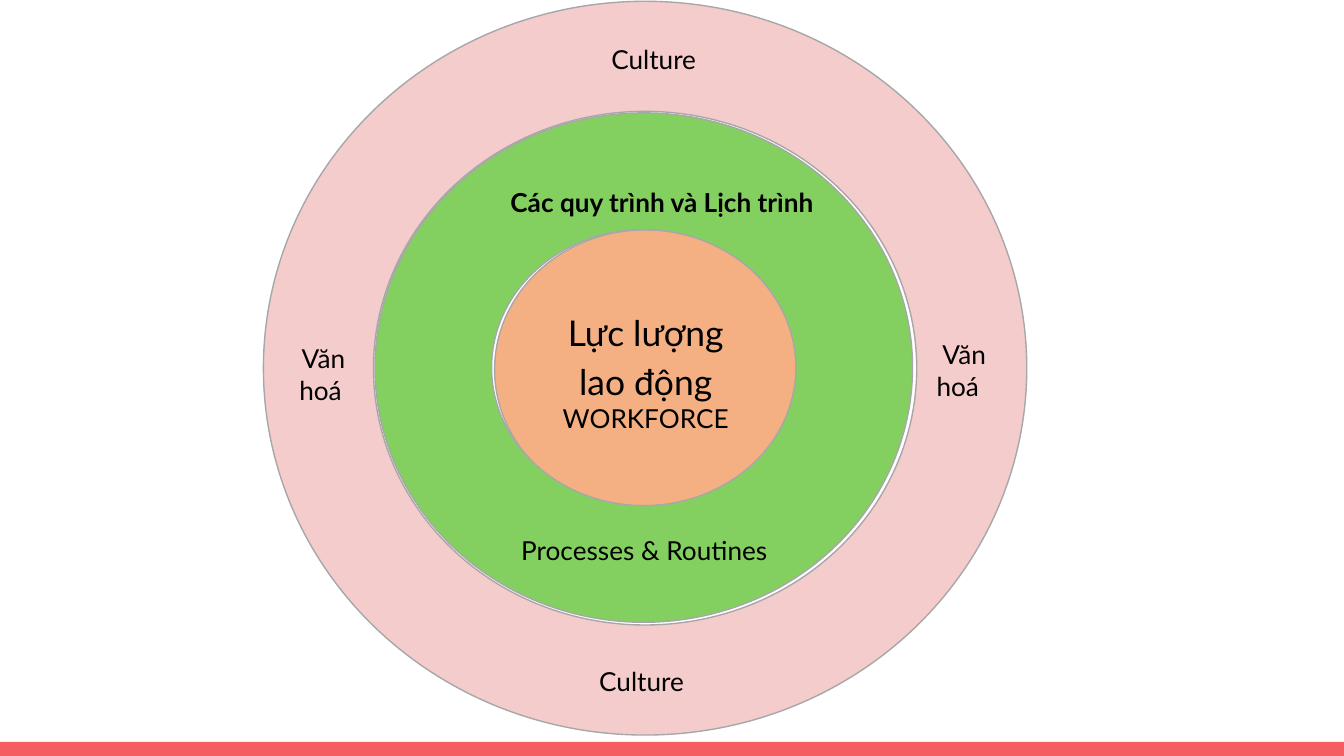
import pptx
import pptx.dml.color
import pptx.enum.shapes
import pptx.enum.text
import pptx.util

Inches = pptx.util.Inches
Pt = pptx.util.Pt
Kind = pptx.enum.shapes.MSO_SHAPE
Align = pptx.enum.text.PP_ALIGN
Anchor = pptx.enum.text.MSO_ANCHOR

WIDTH = 10
HEIGHT = WIDTH * 9 / 16


def color(code):
    return pptx.dml.color.RGBColor.from_string(code)


def add_shape(slide, kind, box, fill, line=None):
    shape = slide.shapes.add_shape(kind, *map(Inches, box))
    shape.shadow.inherit = False
    shape.fill.solid()
    shape.fill.fore_color.rgb = color(fill)
    if line:
        shape.line.color.rgb = color(line)
        shape.line.width = Pt(0.75)
    else:
        shape.line.fill.background()
    return shape


def set_frame(frame, anchor):
    frame.word_wrap = True
    frame.vertical_anchor = anchor
    frame.margin_left = frame.margin_right = Inches(0.1)
    frame.margin_top = frame.margin_bottom = Inches(0.1)


def set_para(para, text, size=14, bold=False, align=Align.LEFT):
    para.text = text
    para.alignment = align
    for run in para.runs:
        run.font.name = "Lato"
        run.font.size = Pt(size)
        run.font.bold = bold
        run.font.color.rgb = color("000000")


def add_ring(slide, box, hole, fill, labels):
    """Draw a donut; label boxes are offset from its top left corner."""
    left, top = box[:2]
    ring = add_shape(slide, Kind.DONUT, box, fill, "A7A7A7")
    ring.adjustments[0] = hole
    for text, (x, y, width, height), style in labels:
        area = (left + x, top + y, width, height)
        label = slide.shapes.add_textbox(*map(Inches, area))
        set_frame(label.text_frame, Anchor.TOP)
        set_para(label.text_frame.paragraphs[0], text, **style)


def add_core(slide, box):
    core = add_shape(slide, Kind.OVAL, box, "F4B083", "A7A7A7")
    frame = core.text_frame
    set_frame(frame, Anchor.MIDDLE)
    title = frame.paragraphs[0]
    set_para(title, "Lực lượng lao động", size=19, align=Align.CENTER)
    title.line_spacing = 1.15
    set_para(frame.add_paragraph(), "WORKFORCE", align=Align.CENTER)


def main():
    deck = pptx.Presentation()
    deck.slide_width = Inches(WIDTH)
    deck.slide_height = Inches(HEIGHT)
    slide = deck.slides.add_slide(deck.slide_layouts[6])

    bar = 5.52
    add_shape(slide, Kind.RECTANGLE, (0, bar, WIDTH, HEIGHT - bar), "F55E61")
    add_core(slide, (3.68, 1.71, 2.25, 2.08))
    add_ring(slide, (2.79, 0.84, 4, 3.79), 0.229, "83D061", [
        ("Processes & Routines", (0.99, 3.04, 2.4, 0.57), {}),
        ("Các quy trình và Lịch trình", (0.91, 0.45, 2.7, 0.57),
         {"bold": True}),
    ])
    add_ring(slide, (1.96, 0.01, 5.68, 5.46), 0.15, "F4CCCC", [
        ("Culture", (2.4, 4.84, 1.57, 0.41), {}),
        ("Culture", (2.49, 0.21, 1.57, 0.41), {}),
        (" Văn hoá", (4.91, 2.41, 0.85, 0.41), {}),
        (" Văn hoá", (0, 2.44, 0.85, 0.41), {"align": Align.CENTER}),
    ])
    deck.save("out.pptx")


if __name__ == "__main__":
    main()
